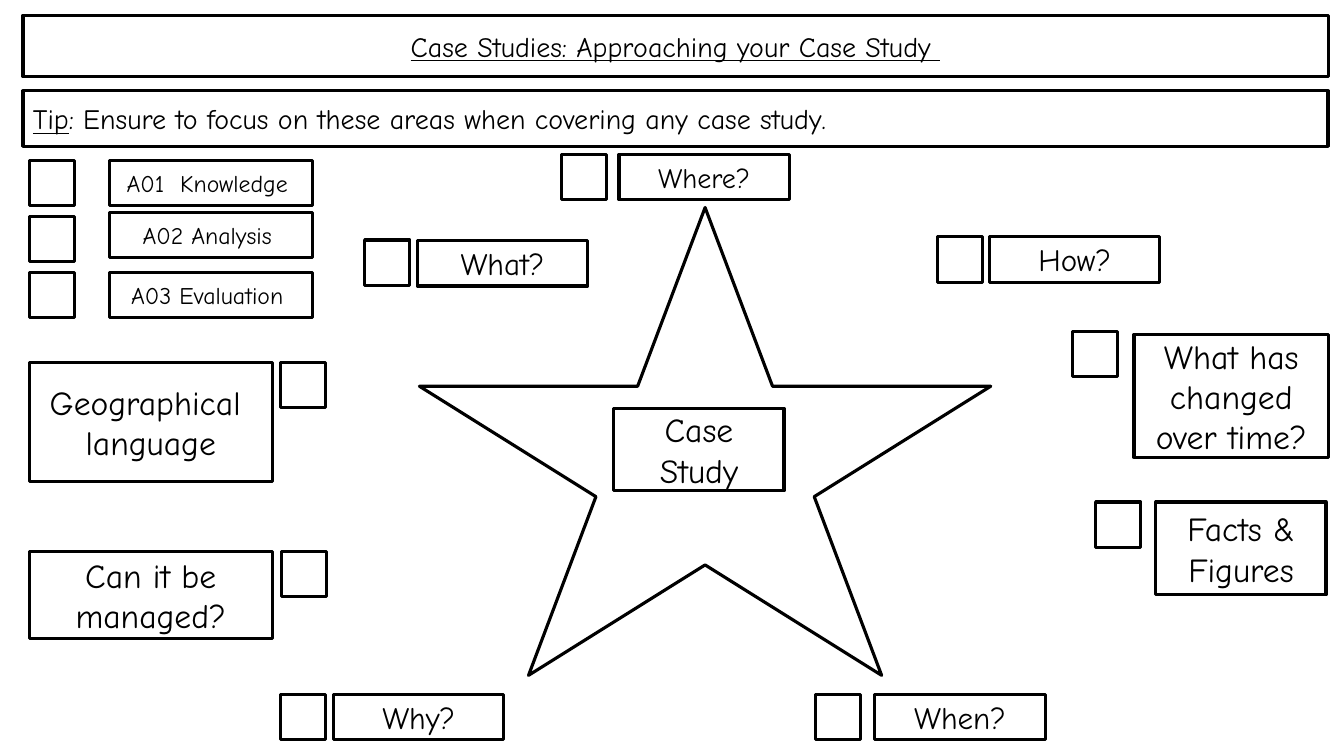
from pptx import Presentation
from pptx.dml.color import RGBColor
from pptx.enum.shapes import MSO_SHAPE
from pptx.enum.text import MSO_ANCHOR, MSO_AUTO_SIZE, PP_ALIGN
from pptx.util import Cm, Pt

BLACK = RGBColor(0, 0, 0)
WHITE = RGBColor(255, 255, 255)
RECTANGLE, STAR = MSO_SHAPE.RECTANGLE, MSO_SHAPE.STAR_5_POINT
MIDDLE, NO_AUTOFIT = MSO_ANCHOR.MIDDLE, MSO_AUTO_SIZE.NONE
LEFT, CENTER = PP_ALIGN.LEFT, PP_ALIGN.CENTER

FONT = "Comic Neue"
TICK_BOX = 1.14
LABEL_WIDTH = 4.29
BANNER_LEFT, BANNER_WIDTH = 0.58, 32.89

# Left and top of the tick box, then the top of its label, in cm
OBJECTIVES_LEFT = 0.74
OBJECTIVES = [
    (4.04, 4.04, "A01  Knowledge "),
    (5.46, 5.36, "A02 Analysis "),
    (6.86, 6.86, "A03 Evaluation "),
]

# Label box (left, top, width, height), tick box (left, top), size, lines
QUESTIONS = [
    ((15.6, 3.89, LABEL_WIDTH, TICK_BOX), (14.15, 3.89), 20, ["Where?"]),
    ((8.41, 17.5, LABEL_WIDTH, TICK_BOX), (7.06, 17.5), 22.2, ["Why?"]),
    ((10.52, 6.07, LABEL_WIDTH, TICK_BOX), (9.19, 6.05), 22.2, ["What?"]),
    ((24.94, 5.97, LABEL_WIDTH, TICK_BOX), (23.62, 5.97), 22.2, ["How?"]),
    ((22.05, 17.5, LABEL_WIDTH, TICK_BOX), (20.55, 17.5), 22.2, ["When?"]),
    ((29.13, 12.65, LABEL_WIDTH, 2.34), (27.61, 12.65), 24, ["Facts & Figures"]),
    ((0.74, 9.14, 6.12, 3), (7.06, 9.14), 24, ["Geographical ", "language"]),
    ((0.74, 13.89, 6.12, 2.21), (7.09, 13.89), 24, ["Can it be managed?"]),
    ((28.58, 8.43, 4.9, 3.1), (27.03, 8.36), 24, ["What has changed over time?"]),
]


def outline(shape):
    shape.line.color.rgb = BLACK
    shape.line.width = Pt(2.25)


def add_outlined_shape(slide, kind, box, filled=False):
    shape = slide.shapes.add_shape(kind, *map(Cm, box))
    shape.shadow.inherit = False
    outline(shape)
    if filled:
        shape.fill.solid()
        shape.fill.fore_color.rgb = WHITE
    else:
        shape.fill.background()
    return shape


def write(shape, paragraphs, size, alignment=CENTER):
    """Fill the shape with paragraphs, each a list of (text, underlined) runs."""
    frame = shape.text_frame
    frame.word_wrap = True
    frame.auto_size = NO_AUTOFIT
    frame.vertical_anchor = MIDDLE
    for index, runs in enumerate(paragraphs):
        paragraph = frame.add_paragraph() if index else frame.paragraphs[0]
        paragraph.alignment = alignment
        for text, underlined in runs:
            run = paragraph.add_run()
            run.text = text
            run.font.name = FONT
            run.font.size = Pt(size)
            run.font.color.rgb = BLACK
            run.font.underline = underlined


def add_label(slide, box, lines, size):
    label = add_outlined_shape(slide, RECTANGLE, box)
    write(label, [[(line, False)] for line in lines], size)


def add_tick_box(slide, left, top):
    add_outlined_shape(slide, RECTANGLE, (left, top, TICK_BOX, TICK_BOX), filled=True)


def add_title(slide, box):
    title = slide.shapes.title
    title.left, title.top, title.width, title.height = map(Cm, box)
    outline(title)
    write(title, [[("Case Studies: Approaching your Case Study ", True)]], 20)


def add_tip(slide, box):
    tip = add_outlined_shape(slide, RECTANGLE, box)
    advice = ": Ensure to focus on these areas when covering any case study."
    write(tip, [[("Tip", True), (advice, False)]], 20, LEFT)


def add_star(slide, box):
    left, top = box[:2]
    add_outlined_shape(slide, STAR, box, filled=True)
    add_label(slide, (left + 4.9, top + 5.06, LABEL_WIDTH, 2.08), ["Case Study"], 24)


def add_objectives(slide, left):
    for tick_top, label_top, text in OBJECTIVES:
        add_tick_box(slide, left, tick_top)
        add_label(slide, (left + 2.03, label_top, 5.11, TICK_BOX), [text], 17)


def add_questions(slide):
    for box, tick_position, size, lines in QUESTIONS:
        add_label(slide, box, lines, size)
        add_tick_box(slide, *tick_position)


def main():
    presentation = Presentation()
    presentation.slide_width, presentation.slide_height = Cm(33.87), Cm(19.05)
    slide = presentation.slides.add_slide(presentation.slide_layouts[5])
    add_title(slide, (BANNER_LEFT, 0.38, BANNER_WIDTH, 1.55))
    add_tip(slide, (BANNER_LEFT, 2.29, BANNER_WIDTH, 1.4))
    add_star(slide, (10.57, 5.23, 14.4, 11.79))
    add_objectives(slide, OBJECTIVES_LEFT)
    add_questions(slide)
    presentation.save("out.pptx")


if __name__ == "__main__":
    main()
